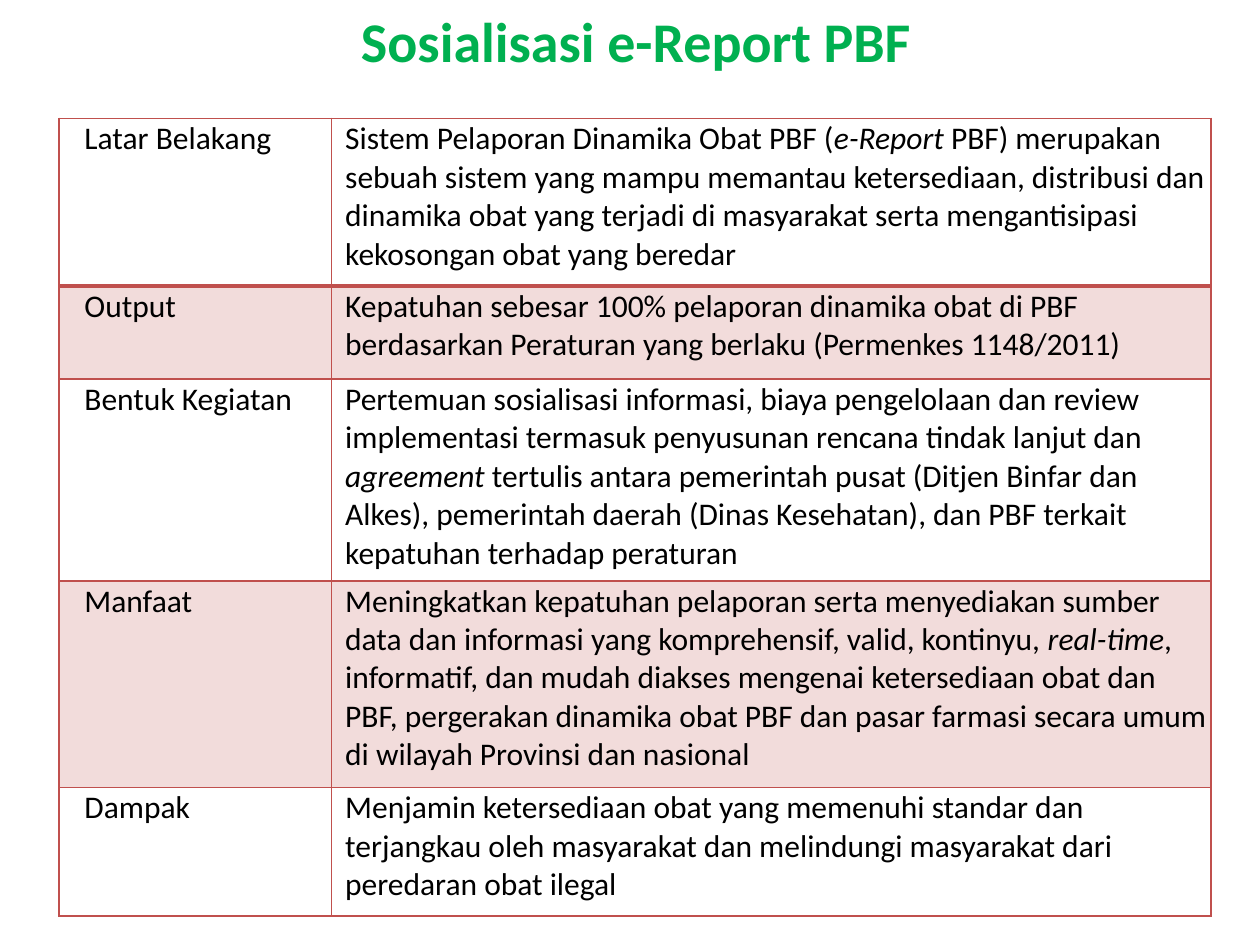
"""Builds the e-Report PBF socialisation slide: a title over a two-column table."""
import pptx
import pptx.util
import pptx.dml.color
import pptx.enum.text
import pptx.oxml
import pptx.oxml.ns

TITLE = "Sosialisasi e-Report PBF"
ROWS = [
    ("Latar Belakang", 1.33, [
        ("Sistem Pelaporan Dinamika Obat PBF (", False),
        ("e-Report", True),
        (" PBF) merupakan sebuah sistem yang mampu memantau ketersediaan, distribusi dan "
         "dinamika obat yang terjadi di masyarakat serta mengantisipasi kekosongan obat "
         "yang beredar", False)]),
    ("Output", 0.74, [
        ("Kepatuhan sebesar 100% pelaporan dinamika obat di PBF berdasarkan Peraturan yang "
         "berlaku (Permenkes 1148/2011)", False)]),
    ("Bentuk Kegiatan", 1.6, [
        ("Pertemuan sosialisasi informasi, biaya pengelolaan dan review implementasi "
         "termasuk penyusunan rencana tindak lanjut dan ", False),
        ("agreement ", True),
        ("tertulis antara pemerintah pusat (Ditjen Binfar dan Alkes), pemerintah daerah "
         "(Dinas Kesehatan), dan PBF terkait kepatuhan terhadap peraturan", False)]),
    ("Manfaat", 1.64, [
        ("Meningkatkan kepatuhan pelaporan serta menyediakan sumber data dan informasi yang "
         "komprehensif, valid, kontinyu, ", False),
        ("real-time", True),
        (", informatif, dan mudah diakses mengenai ketersediaan obat dan PBF, pergerakan "
         "dinamika obat PBF dan pasar farmasi secara umum di wilayah Provinsi dan nasional",
         False)]),
    ("Dampak", 1.02, [
        ("Menjamin ketersediaan obat yang memenuhi standar dan terjangkau oleh masyarakat "
         "dan melindungi masyarakat dari peredaran obat ilegal", False)]),
]
COLUMNS = [(2.16, 0.19), (6.98, 0.1)]
LEFT, TOP = 0.47, 0.94
COLORS = {"title": "00B050", "text": "000000", "border": "C0504D", "band": "F2DCDB"}
TITLE_FONT = {"name": "Calibri", "size": pptx.util.Pt(32), "bold": True}
CELL_FONT = {"name": "Calibri", "size": pptx.util.Pt(18), "bold": False}
INCH = pptx.util.Inches


def rgb(key):
    return pptx.dml.color.RGBColor.from_string(COLORS[key])


def set_all(target, values):
    for name, value in values.items():
        setattr(target, name, value)


def write(p, runs, font, color, indent):
    p_pr = p._p.get_or_add_pPr()
    for name, value in {"marL": INCH(indent), "indent": 0}.items():
        p_pr.set(name, str(int(value)))
    for text, italic in runs:
        r = p.add_run()
        r.text = text
        set_all(r.font, {**font, "italic": italic})
        r.font.color.rgb = rgb(color)


def draw_borders(cell, widths):
    tc_pr = cell._tc.get_or_add_tcPr()
    for i, (side, width) in enumerate(widths.items()):
        tc_pr.insert(i, pptx.oxml.parse_xml(
            f'<a:ln{side} {pptx.oxml.ns.nsdecls("a")} w="{pptx.util.Pt(width)}" cmpd="sng">'
            f'<a:solidFill><a:srgbClr val="{COLORS["border"]}"/></a:solidFill>'
            f'<a:prstDash val="solid"/></a:ln{side}>'))


def add_title(s):
    sp = s.shapes.add_textbox(0, 0, INCH(10), INCH(0.86))
    tf = sp.text_frame
    set_all(tf, {"word_wrap": True, "margin_top": INCH(0.05), "margin_left": 0,
                 "margin_right": 0, "vertical_anchor": pptx.enum.text.MSO_ANCHOR.TOP})
    p = tf.paragraphs[0]
    write(p, [(TITLE, False)], TITLE_FONT, "title", 0.1)
    p.alignment = pptx.enum.text.PP_ALIGN.CENTER


def add_rows(s):
    width = sum(w for w, _ in COLUMNS)
    height = sum(h for _, h, _ in ROWS)
    table = s.shapes.add_table(len(ROWS), len(COLUMNS), INCH(LEFT), INCH(TOP),
                               INCH(width), INCH(height)).table
    set_all(table, {"first_row": False, "horz_banding": False})
    for column, (w, _) in zip(table.columns, COLUMNS):
        column.width = INCH(w)
    for i, (label, h, body) in enumerate(ROWS):
        table.rows[i].height = INCH(h)
        for j, runs in enumerate(([(label, False)], body)):
            cell = table.cell(i, j)
            set_all(cell, {"margin_left": INCH(0.01), "margin_right": INCH(0.01),
                           "margin_top": INCH(0.01), "margin_bottom": 0})
            write(cell.text_frame.paragraphs[0], runs, CELL_FONT, "text", COLUMNS[j][1])
            if i % 2:
                cell.fill.solid()
                cell.fill.fore_color.rgb = rgb("band")
            else:
                cell.fill.background()
            draw_borders(cell, {"L": 1, "R": 1, "T": 1, "B": 2 if i == 0 else 1})


def main():
    prs = pptx.Presentation()
    set_all(prs, {"slide_width": INCH(10), "slide_height": INCH(7.5)})
    s = prs.slides.add_slide(prs.slide_layouts[6])
    add_title(s)
    add_rows(s)
    prs.save("out.pptx")


if __name__ == "__main__":
    main()
